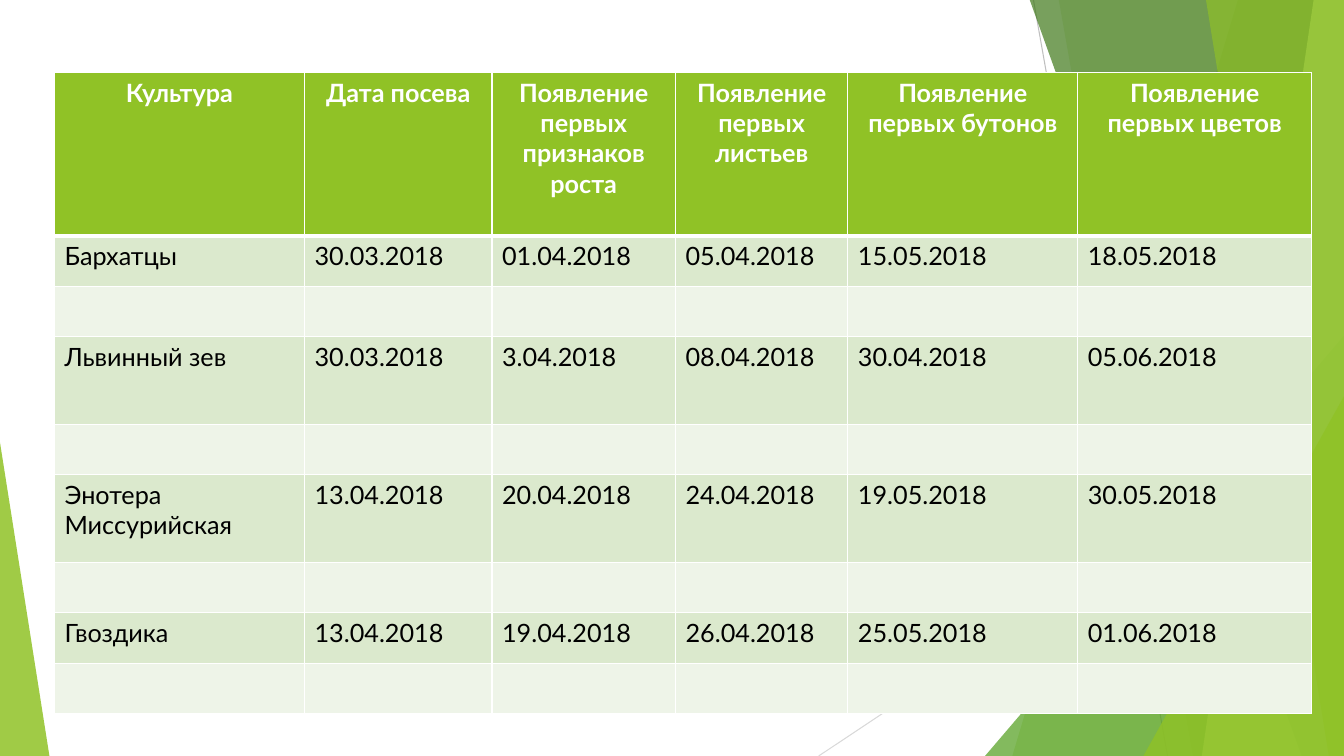
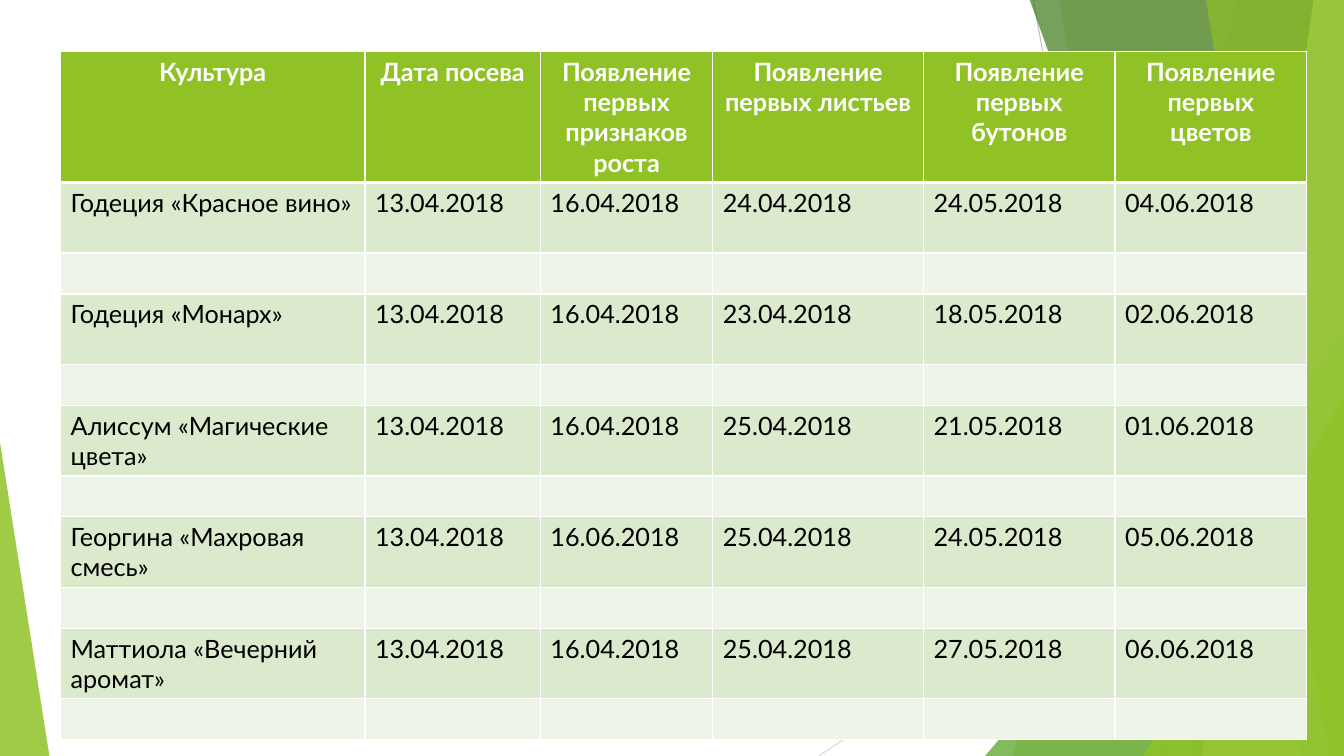
from lxml.etree import SubElement
from pptx import Presentation
from pptx.dml.color import RGBColor
from pptx.enum.shapes import MSO_CONNECTOR, MSO_SHAPE
from pptx.enum.text import PP_ALIGN
from pptx.oxml.ns import qn
from pptx.util import Inches, Pt

FONT = "Lato"
GREEN, WHITE, BLACK = "90C226", "FFFFFF", "000000"
ROW_FILL, GAP_FILL = "DBE9CD", "EEF4E8"
WIDTH, HEIGHT, TOP = 13.33, 7.5, -0.01

RAYS = [
    ((10.25, 0), (11.58, HEIGHT), "BFBFBF"),
    ((WIDTH, 4.03), (8.12, HEIGHT), "D9D9D9"),
]
BAND, TRIANGLE = "band", "triangle"
FACETS = [
    (BAND, (12.28, 10.04), GREEN, 30),
    (BAND, (10.5, 11.83), GREEN, 20),
    (TRIANGLE, (9.77, 3.33, 3.56, 1), "54A021", 72),
    (BAND, (10.21, 12.91), "3F7819", 70),
    (BAND, (13.03, 11.92), "C0E474", 70),
    (BAND, (11.96, 13.18), GREEN, 65),
    (TRIANGLE, (11.34, 3.93, 1.99, 1), GREEN, 80),
    (TRIANGLE, (0, 4.39, 0.49, 0), GREEN, 85),
]

HEADERS = [
    "Культура", "Дата посева", "Появление первых признаков роста",
    "Появление первых листьев", "Появление первых бутонов",
    "Появление первых цветов",
]
TABLES = [
    {
        "at": (0.54, 0.72),
        "cols": [2.48, 1.86, 1.82, 1.71, 2.28, 2.32],
        "header": 1.62, "gap": 0.5, "heights": [0.5, 0.87, 0.87, 0.5],
        "rows": [
            ("Бархатцы", "30.03.2018", "01.04.2018", "05.04.2018", "15.05.2018", "18.05.2018"),
            ("Львинный зев", "30.03.2018", "3.04.2018", "08.04.2018", "30.04.2018", "05.06.2018"),
            ("Энотера Миссурийская", "13.04.2018", "20.04.2018", "24.04.2018", "19.05.2018", "30.05.2018"),
            ("Гвоздика", "13.04.2018", "19.04.2018", "26.04.2018", "25.05.2018", "01.06.2018"),
        ],
    },
    {
        "at": (0.6, 0.51),
        "cols": [3.02, 1.74, 1.71, 2.09, 1.9, 1.9],
        "header": 1.3, "gap": 0.4, "heights": [0.7] * 5,
        "rows": [
            ("Годеция «Красное вино»", "13.04.2018", "16.04.2018", "24.04.2018", "24.05.2018", "04.06.2018"),
            ("Годеция «Монарх»", "13.04.2018", "16.04.2018", "23.04.2018", "18.05.2018", "02.06.2018"),
            ("Алиссум «Магические цвета»", "13.04.2018", "16.04.2018", "25.04.2018", "21.05.2018", "01.06.2018"),
            ("Георгина «Махровая смесь»", "13.04.2018", "16.06.2018", "25.04.2018", "24.05.2018", "05.06.2018"),
            ("Маттиола «Вечерний аромат»", "13.04.2018", "16.04.2018", "25.04.2018", "27.05.2018", "06.06.2018"),
        ],
    },
]


def rgb(value):
    return RGBColor.from_string(value)


def paint(sp, color, opacity):
    sp.shadow.inherit = False
    sp.fill.solid()
    sp.fill.fore_color.rgb = rgb(color)
    sp.line.fill.background()
    clr = sp.element.spPr.find(qn("a:solidFill"))[0]
    SubElement(clr, qn("a:alpha")).set("val", str(opacity * 1000))


def add_ray(shapes, start, end, color):
    line = shapes.add_connector(MSO_CONNECTOR.STRAIGHT, *map(Inches, start + end))
    line.line.color.rgb = rgb(color)
    line.line.width = Pt(0.75)
    SubElement(line.element.spPr, qn("a:effectLst"))
    return line


def add_band(shapes, top_x, bottom_x):
    points = [(WIDTH, TOP), (WIDTH, HEIGHT), (bottom_x, HEIGHT)]
    outline = shapes.build_freeform(Inches(top_x), Inches(TOP))
    outline.add_line_segments([(Inches(x), Inches(y)) for x, y in points], close=True)
    return outline.convert_to_shape()


def add_triangle(shapes, left, top, width, apex):
    sp = shapes.add_shape(MSO_SHAPE.ISOSCELES_TRIANGLE,
                          *map(Inches, (left, top, width, HEIGHT - top)))
    sp.adjustments[0] = apex
    return sp


def decorate_master(prs, slide):
    shapes = slide.shapes
    parts = [add_ray(shapes, *ray) for ray in RAYS]
    for kind, geometry, color, opacity in FACETS:
        sp = (add_band if kind == BAND else add_triangle)(shapes, *geometry)
        paint(sp, color, opacity)
        parts.append(sp)
    for number, sp in enumerate(parts, 100):
        sp.element.xpath(".//p:cNvPr")[0].set("id", str(number))
        prs.slide_master.shapes.element.append(sp.element)


def add_borders(cell, row):
    widths = {"L": 1, "R": 1, "T": 3 if row == 1 else 1, "B": 3 if row == 0 else 1}
    tcPr = cell._tc.get_or_add_tcPr()
    for side, width in widths.items():
        ln = SubElement(tcPr, qn(f"a:ln{side}"), w=str(Pt(width)))
        fill = SubElement(ln, qn("a:solidFill"))
        SubElement(fill, qn("a:srgbClr"), val=WHITE)


def format_cell(cell, text, row, fill):
    add_borders(cell, row)
    cell.fill.solid()
    cell.fill.fore_color.rgb = rgb(fill)
    if not text:
        return
    cell.text = text
    p = cell.text_frame.paragraphs[0]
    p.alignment = PP_ALIGN.CENTER if row == 0 else PP_ALIGN.LEFT
    for r in p.runs:
        r.font.name = FONT
        r.font.size = Pt(18)
        r.font.bold = row == 0
        r.font.color.rgb = rgb(WHITE if row == 0 else BLACK)


def add_schedule(slide, data):
    rows = [(HEADERS, data["header"], GREEN)]
    for texts, height in zip(data["rows"], data["heights"]):
        rows.append((texts, height, ROW_FILL))
        rows.append(([""] * len(HEADERS), data["gap"], GAP_FILL))
    size = sum(data["cols"]), sum(height for _, height, _ in rows)
    table = slide.shapes.add_table(len(rows), len(HEADERS),
                                   *map(Inches, data["at"] + size)).table
    for column, width in zip(table.columns, data["cols"]):
        column.width = Inches(width)
    for i, (texts, height, fill) in enumerate(rows):
        table.rows[i].height = Inches(height)
        for j, text in enumerate(texts):
            format_cell(table.cell(i, j), text, i, fill)


def main():
    prs = Presentation()
    prs.slide_width, prs.slide_height = Inches(WIDTH), Inches(HEIGHT)
    slides = [prs.slides.add_slide(prs.slide_layouts[6]) for _ in TABLES]
    decorate_master(prs, slides[0])
    for slide, data in zip(slides, TABLES):
        add_schedule(slide, data)
    prs.save("out.pptx")


if __name__ == "__main__":
    main()
